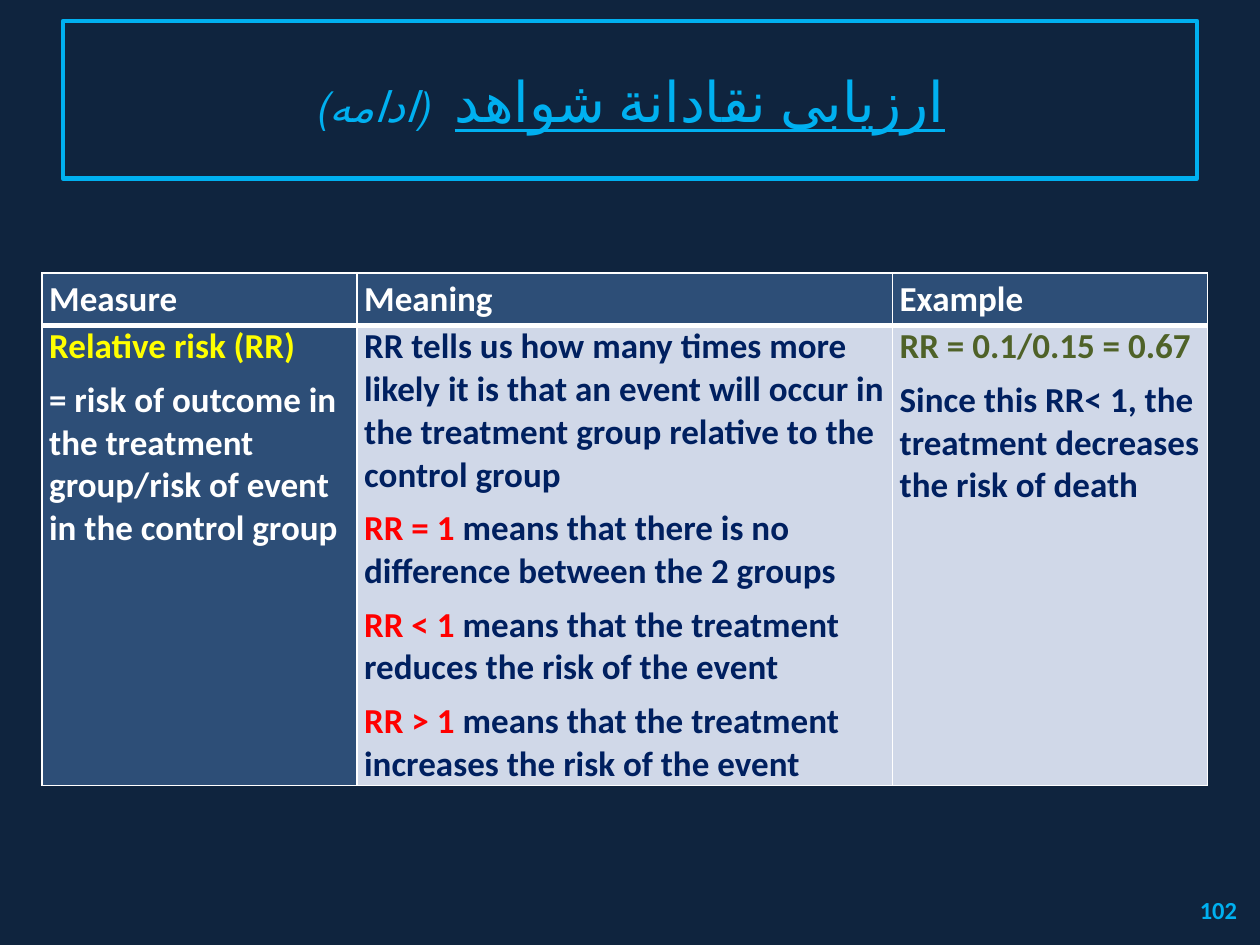
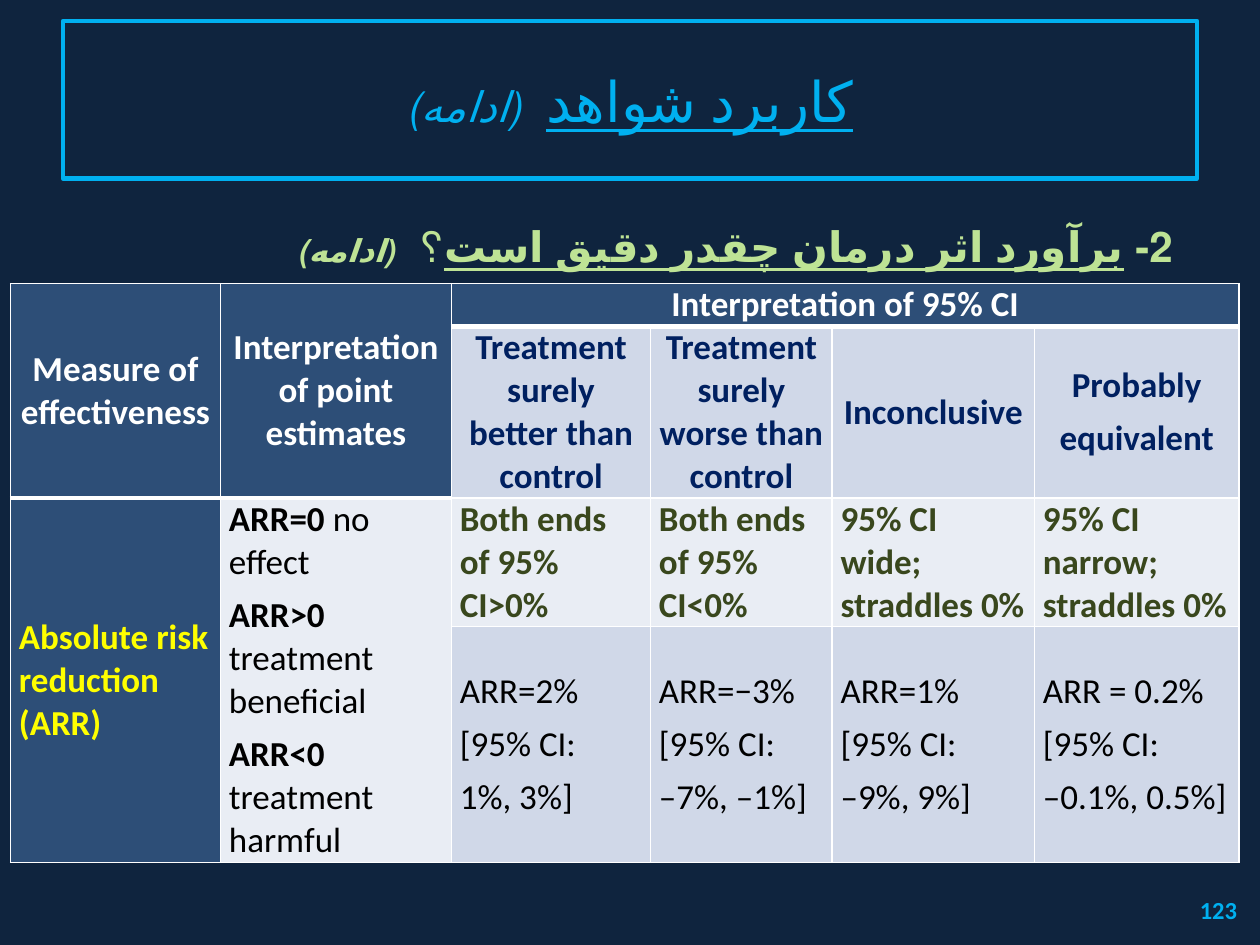
import pptx
import pptx.util
import pptx.dml.color
import pptx.enum.text
import pptx.oxml

Pt = pptx.util.Pt
RGB = pptx.dml.color.RGBColor
ALIGN = pptx.enum.text.PP_ALIGN
ANCHOR = pptx.enum.text.MSO_ANCHOR

NAVY = RGB(0x0F, 0x24, 0x3E)
SKY = RGB(0x00, 0xB0, 0xF0)
WHITE = RGB(0xFF, 0xFF, 0xFF)
BLACK = RGB(0x00, 0x00, 0x00)
YELLOW = RGB(0xFF, 0xFF, 0x00)
RED = RGB(0xFF, 0x00, 0x00)
INK = RGB(0x00, 0x20, 0x60)
OLIVE = RGB(0x4F, 0x62, 0x28)
MOSS = RGB(0x39, 0x47, 0x1D)
LIME = RGB(0xBE, 0xE3, 0x95)
HEAD = RGB(0x2D, 0x4E, 0x77)
BAND = RGB(0xD0, 0xD8, 0xE8)
PALE = RGB(0xE9, 0xED, 0xF4)
NS = "http://schemas.openxmlformats.org/drawingml/2006/main"


def write(frame, paras, align=ALIGN.LEFT, after=6, line=None, rtl=False, **look):
    """Each paragraph is a string or a list of (text, format) runs."""
    frame.word_wrap = True
    frame.auto_size = pptx.enum.text.MSO_AUTO_SIZE.NONE
    for i, runs in enumerate(paras):
        para = frame.paragraphs[0] if i == 0 else frame.add_paragraph()
        para.alignment = align
        para.space_before, para.space_after = Pt(0), Pt(after)
        if line:
            para.line_spacing = line
        if rtl:
            para._p.get_or_add_pPr().set("rtl", "1")
        for text, extra in [(runs, {})] if isinstance(runs, str) else runs:
            form = {"size": 20, "bold": True, "color": WHITE, **look, **extra}
            run = para.add_run()
            run.text = text
            font = run.font
            font.name, font.size = "Calibri", Pt(form["size"])
            font.color.rgb = form["color"]
            font.bold = form["bold"]
            font.italic = form.get("italic", False)
            font.underline = form.get("line_under", False)
            props = run._r.get_or_add_rPr()
            props.set("lang", "fa-IR" if rtl else "en-US")
            if "track" in form:
                props.set("spc", str(form["track"] * 100))


def paint(cell, fill, side, foot=1):
    """Fill a cell and give it white borders."""
    cell.fill.solid()
    cell.fill.fore_color.rgb = fill
    cell.margin_left = cell.margin_right = Pt(side)
    cell.margin_top = cell.margin_bottom = Pt(0)
    props = cell._tc.get_or_add_tcPr()
    for i, (edge, wide) in enumerate([("L", 1), ("R", 1), ("T", 1), ("B", foot)]):
        props.insert(i, pptx.oxml.parse_xml(
            f'<a:ln{edge} xmlns:a="{NS}" w="{Pt(wide)}"><a:solidFill>'
            f'<a:srgbClr val="{WHITE}"/></a:solidFill></a:ln{edge}>'))


deck = pptx.Presentation()
deck.slide_width, deck.slide_height = Pt(720), Pt(540)
back = deck.slide_master.background.fill
back.solid()
back.fore_color.rgb = NAVY

# Shared frame: title box and page number
slides = []
for kind, name, page in [(5, "ارزيابی نقادانة شواهد", "102"),
                         (1, "کاربرد شواهد", "123")]:
    slide = deck.slides.add_slide(deck.slide_layouts[kind])
    slides.append(slide)
    title = slide.shapes.title
    title.left, title.top, title.width, title.height = Pt(36), Pt(12), Pt(648), Pt(90)
    title.line.color.rgb = SKY
    title.line.width = Pt(2.5)
    title.text_frame.vertical_anchor = ANCHOR.MIDDLE
    write(title.text_frame,
          [[(name, {"line_under": True}), (" ", {"size": 24, "track": 8}),
            ("(ادامه)", {"size": 24, "italic": True})]],
          align=ALIGN.CENTER, after=0, rtl=True, size=32, color=SKY, bold=False)
    foot = slide.shapes.add_textbox(Pt(546), Pt(505.5), Pt(168), Pt(28.5))
    foot.text_frame.vertical_anchor = ANCHOR.MIDDLE
    write(foot.text_frame, [page], align=ALIGN.RIGHT, after=0, size=14, color=SKY)

# Slide 1: relative risk table
risk = slides[0].shapes.add_table(2, 3, Pt(24), Pt(156), Pt(666), Pt(293)).table
for col, wide in zip(risk.columns, [180, 306, 180]):
    col.width = Pt(wide)
for row, high in zip(risk.rows, [30, 263]):
    row.height = Pt(high)
for i, name in enumerate(["Measure", "Meaning", "Example"]):
    cell = risk.cell(0, i)
    paint(cell, HEAD, 4.1, 3)
    cell.vertical_anchor = ANCHOR.MIDDLE
    write(cell.text_frame, [name], align=ALIGN.JUSTIFY)

rules = [("=", "there is no difference between the 2 groups"),
         ("<", "the treatment reduces the risk of the event"),
         (">", "the treatment increases the risk of the event")]
bodies = [
    (HEAD, WHITE, [
        [("Relative risk (RR)", {"color": YELLOW})],
        "= risk of outcome in the treatment group/risk of event in the control group"]),
    (BAND, INK, [
        "RR tells us how many times more likely it is that an event will occur "
        "in the treatment group relative to the control group",
        *[[(f"RR {sign} 1", {"color": RED}), (f" means that {fact}", {})]
          for sign, fact in rules]]),
    (BAND, INK, [
        [("RR = 0.1/0.15 = 0.67", {"color": OLIVE})],
        "Since this RR< 1, the treatment decreases the risk of death"]),
]
for i, (fill, color, paras) in enumerate(bodies):
    paint(risk.cell(1, i), fill, 4.1)
    write(risk.cell(1, i).text_frame, paras, color=color)

# Slide 2: question above the table
ask = slides[1].placeholders[1]
ask.left, ask.top, ask.width, ask.height = Pt(48), Pt(108), Pt(636), Pt(54)
write(ask.text_frame,
      [[(" 2- ", {}), ("برآورد اثر درمان چقدر دقیق است", {"line_under": True}),
        ("؟", {}), (" ", {"track": 8}), ("(ادامه)", {"size": 18, "italic": True})]],
      align=ALIGN.JUSTIFY, line=1.5, rtl=True, size=24, color=LIME)
props = ask.text_frame.paragraphs[0]._p.get_or_add_pPr()
props.set("marL", "0")
props.set("indent", "0")
props.append(pptx.oxml.parse_xml(f'<a:buNone xmlns:a="{NS}"/>'))

# Slide 2: confidence interval table
trust = slides[1].shapes.add_table(4, 6, Pt(6), Pt(162), Pt(702), Pt(330.4)).table
for col, wide in zip(trust.columns, [120, 132, 113.8, 103.8, 115.6, 116.8]):
    col.width = Pt(wide)
for row, high in zip(trust.rows, [24.5, 97.7, 73.2, 135]):
    row.height = Pt(high)
fills = [[HEAD] * 6,
         [HEAD] * 2 + [BAND] * 4,
         [HEAD] + [PALE] * 5,
         [HEAD, PALE] + [BAND] * 4]
for r, tones in enumerate(fills):
    for c, fill in enumerate(tones):
        thick = r == 0 or (r == 1 and c < 2)
        paint(trust.cell(r, c), fill, 4.8, 3 if thick else 1)
        trust.cell(r, c).vertical_anchor = ANCHOR.MIDDLE
for first, last in [((0, 0), (1, 0)), ((0, 1), (1, 1)), ((0, 2), (0, 5)),
                    ((2, 0), (3, 0)), ((2, 1), (3, 1))]:
    trust.cell(*first).merge(trust.cell(*last))

for i, name in enumerate(["Measure of effectiveness",
                          "Interpretation of point estimates",
                          "Interpretation of 95% CI"]):
    write(trust.cell(0, i).text_frame, [name], align=ALIGN.CENTER)
trust.cell(0, 2).vertical_anchor = ANCHOR.TOP
write(trust.cell(2, 0).text_frame, ["Absolute risk reduction (ARR)"], color=YELLOW)
trust.cell(2, 1).vertical_anchor = ANCHOR.TOP
write(trust.cell(2, 1).text_frame,
      [[(f"ARR{sign}0 ", {"bold": True}), (fact, {})]
       for sign, fact in [("=", "no effect"), ("˃", "treatment beneficial"),
                          ("˂", "treatment harmful")]],
      color=BLACK, bold=False)

cases = [
    (["Treatment surely better than control"], "Both ends of 95% CI>0%",
     "ARR=2%", "1%, 3%]"),
    (["Treatment surely worse than control"], "Both ends of 95% CI<0%",
     "ARR=−3%", "–7%, –1%]"),
    (["Inconclusive"], "95% CI wide; straddles 0%", "ARR=1%", "–9%, 9%]"),
    (["Probably", "equivalent"], "95% CI narrow; straddles 0%",
     "ARR = 0.2%", "–0.1%, 0.5%]"),
]
for c, (name, rule, value, span) in enumerate(cases, 2):
    write(trust.cell(1, c).text_frame, name, align=ALIGN.CENTER, color=INK)
    write(trust.cell(2, c).text_frame, [rule], color=MOSS)
    write(trust.cell(3, c).text_frame, [value, "[95% CI:", span],
          color=BLACK, bold=False)

deck.save("out.pptx")
